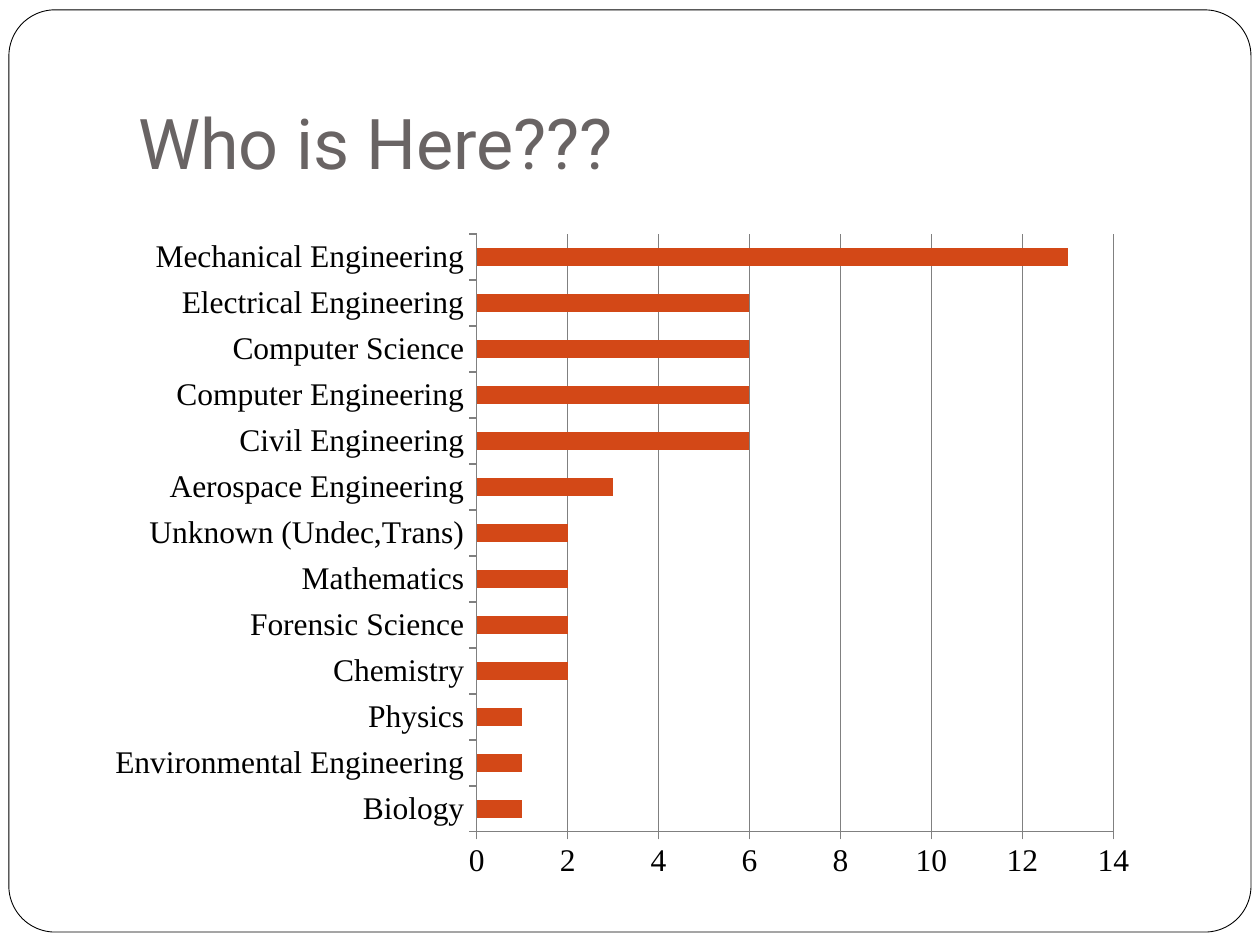
from dataclasses import dataclass

import lxml.etree
import pptx
import pptx.chart.data
import pptx.dml.color
import pptx.enum.chart
import pptx.enum.shapes
import pptx.enum.text
import pptx.oxml
import pptx.oxml.ns
import pptx.util
from pptx.util import Cm


@dataclass(frozen=True)
class Theme:
    title_font: str = "Roboto"
    chart_font: str = "Times New Roman"
    title_size: int = 40
    chart_size: int = 18
    paper: str = "FFFFFF"
    ink: str = "000000"
    title: str = "696464"
    bar: str = "D34817"
    grid: str = "808080"


@dataclass(frozen=True)
class Box:
    left: float
    top: float
    width: float
    height: float

    def lengths(self) -> tuple:
        return tuple(Cm(value) for value in (self.left, self.top, self.width, self.height))


@dataclass(frozen=True)
class Major:
    name: str
    students: int


THEME = Theme()
FRAME_BOX = Box(0.18, 0.2, 25.04, 18.59)
TITLE_BOX = Box(2.54, 0.76, 21.59, 3.18)
CHART_BOX = Box(1.91, 4.45, 21.39, 13.54)
PLOT_FRACTIONS = {"x": 0.36, "y": 0.02, "w": 0.6, "h": 0.89}

# From the bottom bar to the top one
MAJORS = [
    Major("Biology", 1),
    Major("Environmental Engineering", 1),
    Major("Physics", 1),
    Major("Chemistry", 2),
    Major("Forensic Science", 2),
    Major("Mathematics", 2),
    Major("Unknown (Undec,Trans)", 2),
    Major("Aerospace Engineering", 3),
    Major("Civil Engineering", 6),
    Major("Computer Engineering", 6),
    Major("Computer Science", 6),
    Major("Electrical Engineering", 6),
    Major("Mechanical Engineering", 13),
]


def color(value: str) -> pptx.dml.color.RGBColor:
    return pptx.dml.color.RGBColor.from_string(value)


def format_font(font, *, name: str, size: int, fill: str) -> None:
    font.name = name
    font.size = pptx.util.Pt(size)
    font.bold = False
    font.color.rgb = color(fill)


def write_text(text_frame, text: str, *, name: str, size: int, fill: str, align) -> None:
    paragraph = text_frame.paragraphs[0]
    paragraph.alignment = align
    run = paragraph.add_run()
    run.text = text
    format_font(run.font, name=name, size=size, fill=fill)


def format_line(line, fill: str, width: float) -> None:
    line.color.rgb = color(fill)
    line.width = pptx.util.Pt(width)


def add_frame(slide, box: Box) -> None:
    frame = slide.shapes.add_shape(
        pptx.enum.shapes.MSO_SHAPE.ROUNDED_RECTANGLE, *box.lengths())
    frame.adjustments[0] = 0.05
    frame.shadow.inherit = False
    frame.fill.solid()
    frame.fill.fore_color.rgb = color(THEME.paper)
    format_line(frame.line, THEME.ink, 0.5)
    # Behind the title placeholder
    slide.shapes.element.insert(2, frame.element)


def place_title(slide, box: Box, text: str) -> None:
    title = slide.shapes.title
    title.left, title.top, title.width, title.height = box.lengths()
    text_frame = title.text_frame
    text_frame.word_wrap = True
    text_frame.auto_size = pptx.enum.text.MSO_AUTO_SIZE.NONE
    text_frame.vertical_anchor = pptx.enum.text.MSO_ANCHOR.BOTTOM
    text_frame.margin_left = text_frame.margin_right = text_frame.margin_bottom = Cm(0.25)
    text_frame.margin_top = Cm(0.13)
    write_text(text_frame, text, name=THEME.title_font, size=THEME.title_size,
               fill=THEME.title, align=pptx.enum.text.PP_ALIGN.LEFT)


def set_plot_area(chart, fractions: dict[str, float]) -> None:
    """Fix the inner plot area as fractions of the chart."""
    qualified = pptx.oxml.ns.qn
    plot_area = chart.element.find(".//" + qualified("c:plotArea"))
    layout = plot_area.find(qualified("c:layout"))
    if layout is None:
        layout = lxml.etree.Element(qualified("c:layout"))
        plot_area.insert(0, layout)
    manual = lxml.etree.SubElement(layout, qualified("c:manualLayout"))
    settings = {"layoutTarget": "inner", "xMode": "edge", "yMode": "edge", **fractions}
    for tag, value in settings.items():
        lxml.etree.SubElement(manual, qualified("c:" + tag)).set("val", str(value))


def add_bar_chart(slide, box: Box, majors: list[Major]) -> None:
    data = pptx.chart.data.CategoryChartData()
    data.categories = [major.name for major in majors]
    data.add_series("Series 1", [major.students for major in majors])
    chart = slide.shapes.add_chart(
        pptx.enum.chart.XL_CHART_TYPE.BAR_STACKED, *box.lengths(), data).chart
    chart.has_legend = False
    chart.has_title = False
    format_font(chart.font, name=THEME.chart_font, size=THEME.chart_size, fill=THEME.ink)

    # Bars
    plot = chart.plots[0]
    plot.gap_width = 150
    plot.overlap = 100
    plot.vary_by_categories = False
    bars = plot.series[0].format.fill
    bars.solid()
    bars.fore_color.rgb = color(THEME.bar)

    # Axes and gridlines
    for axis in (chart.category_axis, chart.value_axis):
        axis.major_tick_mark = pptx.enum.chart.XL_TICK_MARK.OUTSIDE
        axis.minor_tick_mark = pptx.enum.chart.XL_TICK_MARK.NONE
        format_line(axis.format.line, THEME.grid, 0.75)
    value_axis = chart.value_axis
    value_axis.minimum_scale, value_axis.maximum_scale, value_axis.major_unit = 0, 14, 2
    value_axis.has_major_gridlines = True
    format_line(value_axis.major_gridlines.format.line, THEME.grid, 0.75)
    set_plot_area(chart, PLOT_FRACTIONS)


def main() -> None:
    presentation = pptx.Presentation()
    presentation.slide_width, presentation.slide_height = Cm(25.4), Cm(19.05)
    slide = presentation.slides.add_slide(presentation.slide_layouts.get_by_name("Title Only"))
    add_frame(slide, FRAME_BOX)
    place_title(slide, TITLE_BOX, "Who is Here???")
    add_bar_chart(slide, CHART_BOX, MAJORS)
    presentation.save("out.pptx")


if __name__ == "__main__":
    main()
